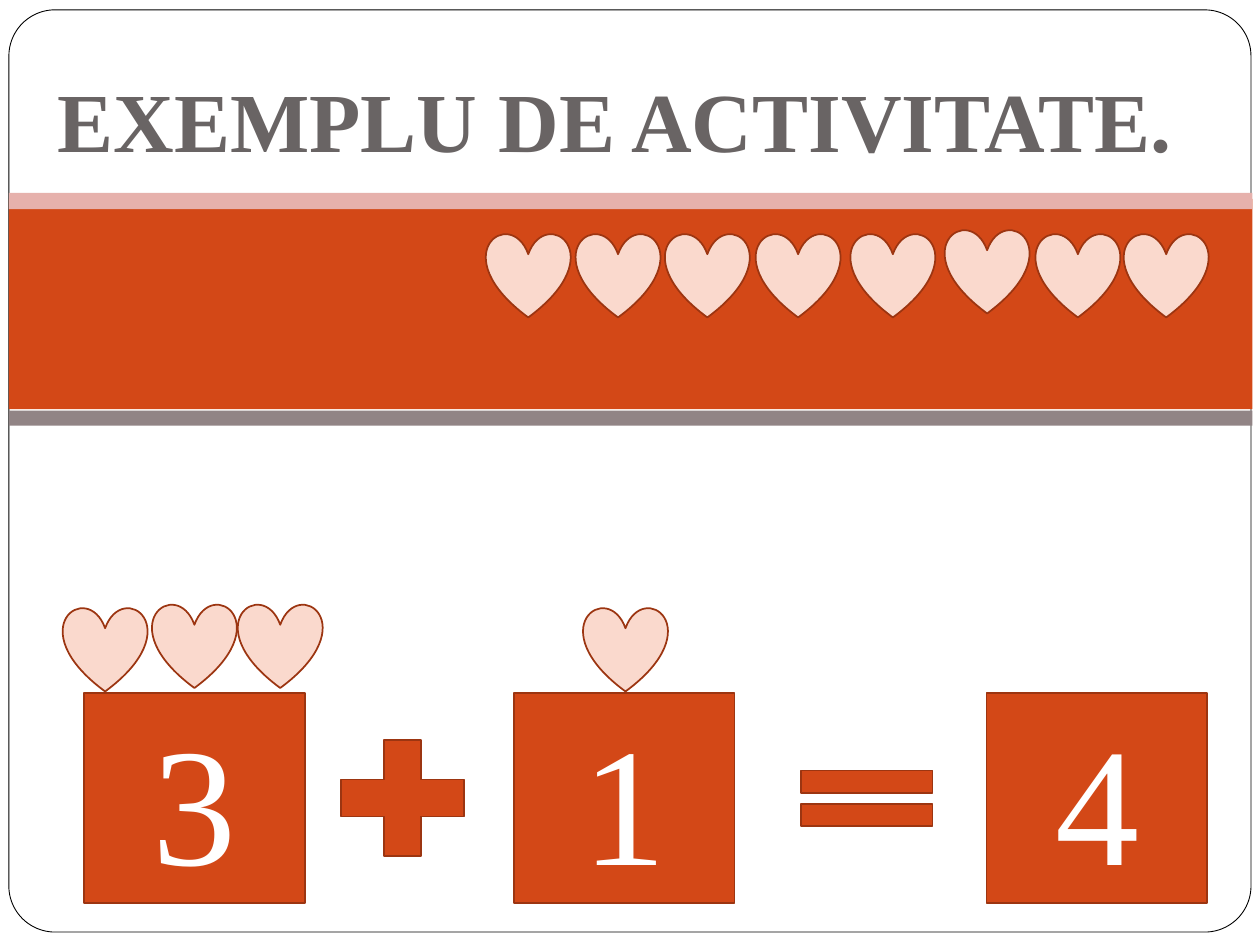
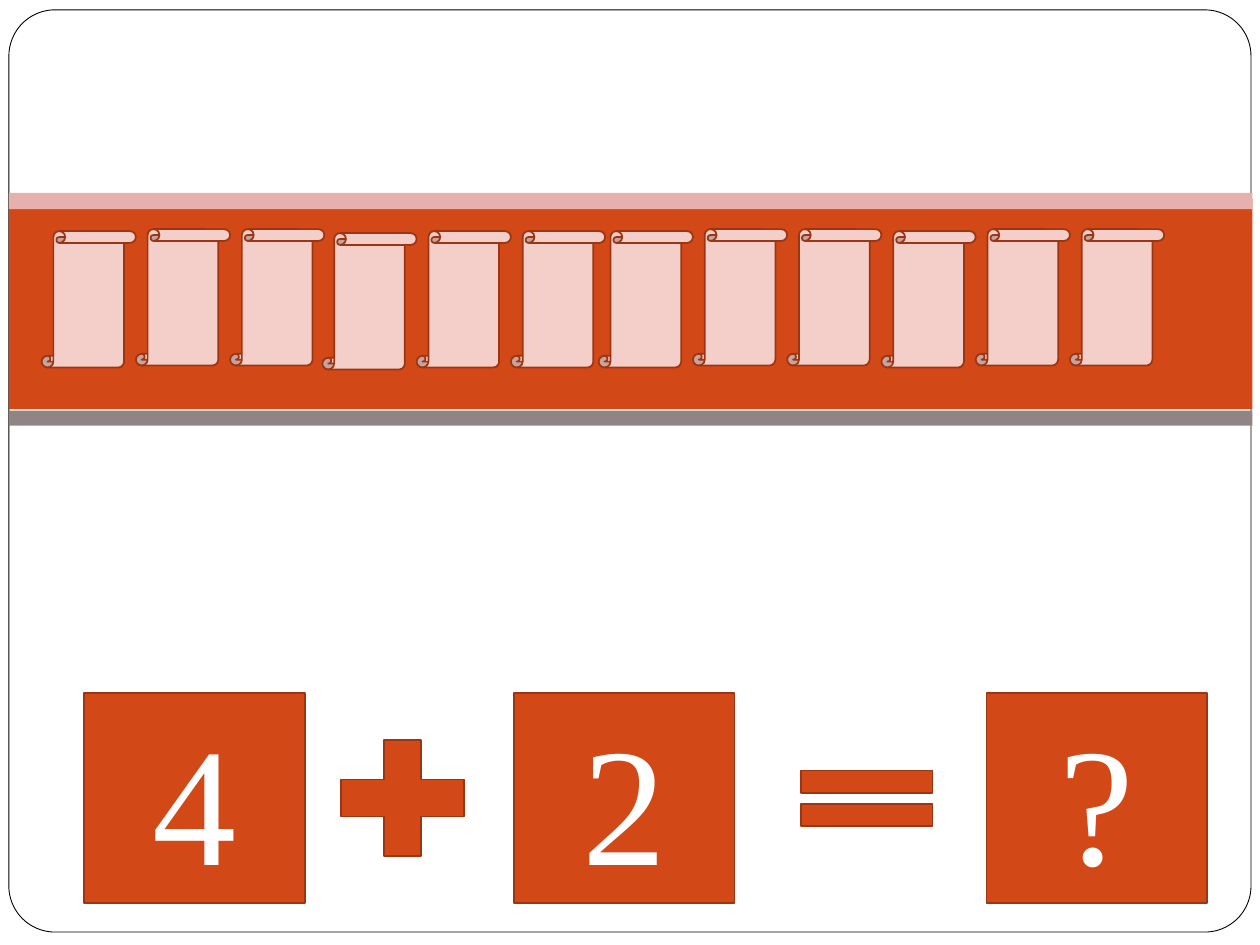
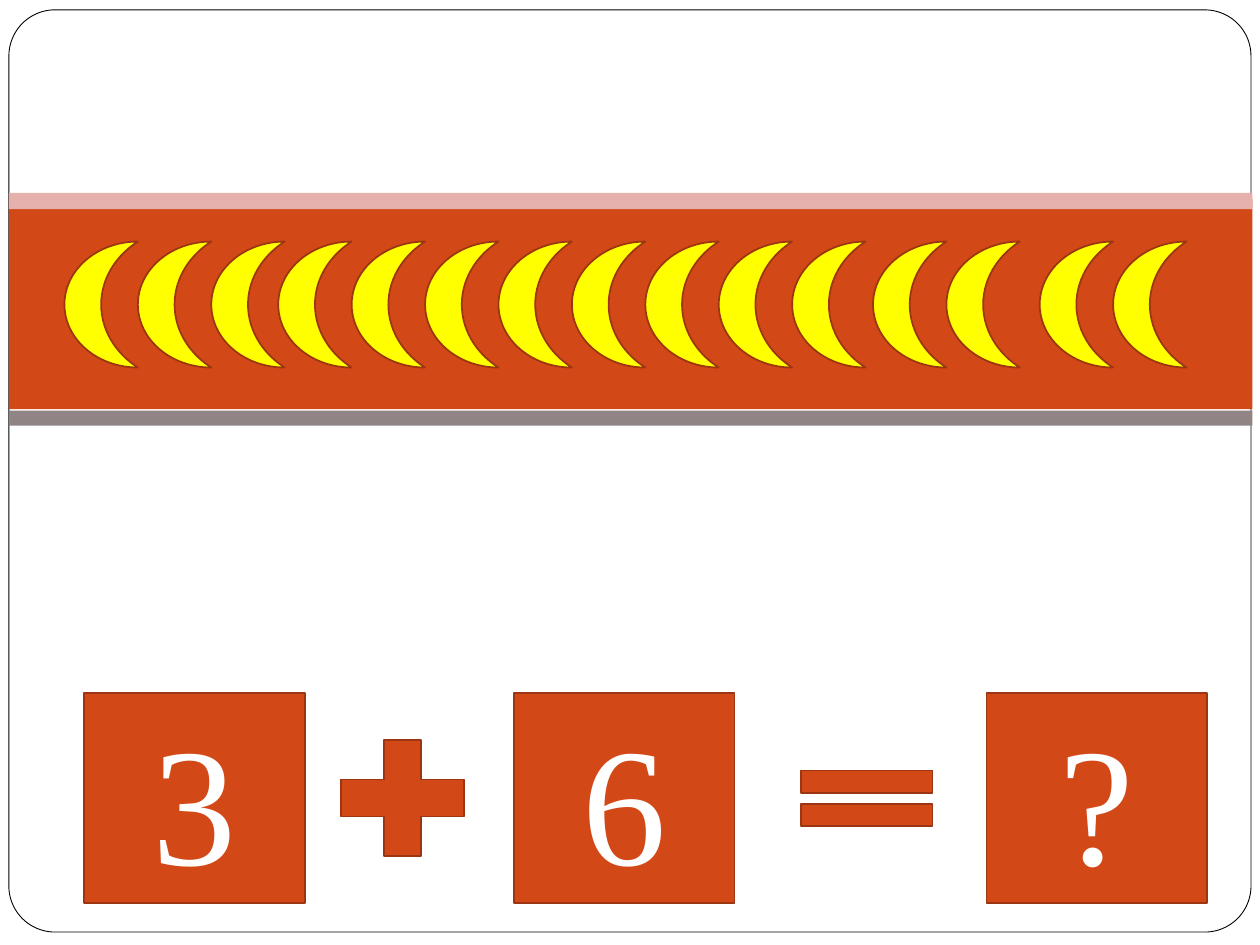
from dataclasses import dataclass

from pptx import Presentation
from pptx.dml.color import RGBColor
from pptx.enum.shapes import MSO_SHAPE
from pptx.enum.text import MSO_ANCHOR, PP_ALIGN
from pptx.util import Cm, Pt


@dataclass(frozen=True)
class Theme:
    font: str = "Times New Roman"
    paper: str = "FFFFFF"
    ink: str = "000000"
    title: str = "696464"
    accent: str = "D34817"
    outline: str = "9C3511"
    band_top: str = "E6B1AC"
    band_bottom: str = "918485"
    heart: str = "FAD9CD"
    scroll: str = "F4CEC9"
    moon: str = "FFFF00"
    title_size: int = 48
    digit_size: int = 96
    thin: float = 0.5
    line: float = 1


class Deck:
    def __init__(self, theme):
        self.t = theme
        self.prs = Presentation()
        self.prs.slide_width, self.prs.slide_height = Cm(25.4), Cm(19.05)
        self.s = None

    def slide(self):
        t = self.t
        self.s = self.prs.slides.add_slide(self.prs.slide_layouts[6])
        frame = self.shape(MSO_SHAPE.ROUNDED_RECTANGLE, (0.18, 0.2, 25.04, 18.59),
                           t.paper, t.ink, t.thin)
        frame.adjustments[0] = 0.05
        for top, height, fill in ((4.01, 4.24, t.accent),
                                  (3.89, 0.33, t.band_top),
                                  (8.28, 0.3, t.band_bottom)):
            self.shape(MSO_SHAPE.RECTANGLE, (0.18, top, 25.07, height), fill, None)

    def shape(self, kind, box, fill, line, width=None):
        sp = self.s.shapes.add_shape(kind, *map(Cm, box))
        sp.shadow.inherit = False
        sp.fill.solid()
        sp.fill.fore_color.rgb = RGBColor.from_string(fill)
        if line:
            sp.line.color.rgb = RGBColor.from_string(line)
            sp.line.width = Pt(width or self.t.line)
        else:
            sp.line.fill.background()
        return sp

    def text(self, sp, text, color, **font):
        tf = sp.text_frame
        for name, value in {"word_wrap": True, "vertical_anchor": MSO_ANCHOR.MIDDLE}.items():
            setattr(tf, name, value)
        p = tf.paragraphs[0]
        p.alignment = PP_ALIGN.CENTER
        r = p.add_run()
        r.text = text
        for name, value in {"name": self.t.font, **font}.items():
            setattr(r.font, name, value)
        r.font.color.rgb = RGBColor.from_string(color)

    def title(self, text):
        sp = self.s.shapes.add_textbox(Cm(0.23), Cm(1.24), Cm(24.77), Cm(2.31))
        self.text(sp, text, self.t.title, size=Pt(self.t.title_size), bold=True)

    def equation(self, digits):
        t = self.t
        for left, digit in zip((1.7, 10.36, 19.89), digits):
            sp = self.shape(MSO_SHAPE.FLOWCHART_PROCESS, (left, 13.97, 4.45, 4.24),
                            t.accent, t.outline)
            self.text(sp, digit, t.paper, size=Pt(t.digit_size))
        for kind, box in ((MSO_SHAPE.MATH_PLUS, (6.43, 14.5, 3.38, 3.18)),
                          (MSO_SHAPE.MATH_EQUAL, (15.67, 15.14, 3.61, 1.91))):
            self.shape(kind, box, t.accent, t.outline)

    def counters(self, kind, places, size, fill):
        for left, top in places:
            self.shape(kind, (left, top, *size), fill, self.t.outline)


def runs(groups, pitch):
    return [start + i * pitch for start, count in groups for i in range(count)]


def main():
    t = Theme()
    deck = Deck(t)

    deck.slide()
    deck.equation("314")
    supply = [(left, 4.7) for left in (9.8, 11.61, 13.41, 15.24, 17.15, 20.88, 22.66)]
    supply.append((19.05, 4.62))
    terms = [(11.76, 12.24), (4.8, 12.17), (1.27, 12.24), (3.07, 12.17)]
    deck.counters(MSO_SHAPE.HEART, supply + terms, (1.7, 1.7), t.heart)
    deck.title("EXEMPLU DE ACTIVITATE. ")

    deck.slide()
    deck.equation("42?")
    high, mid, low = 4.62, 4.66, 4.7
    tops = (mid, high, high, low, mid, mid, mid, high, high, mid, high, high)
    lefts = runs(((0.84, 3), (6.5, 3), (12.07, 6)), 1.9)
    deck.counters(MSO_SHAPE.VERTICAL_SCROLL, zip(lefts, tops), (1.9, 2.75), t.scroll)

    deck.slide()
    deck.equation("36?")
    lefts = runs(((1.3, 3), (5.61, 8), (17.6, 2), (20.96, 2)), 1.48)
    deck.counters(MSO_SHAPE.MOON, [(left, 4.87) for left in lefts], (1.48, 2.54), t.moon)

    deck.prs.save("out.pptx")


if __name__ == "__main__":
    main()
